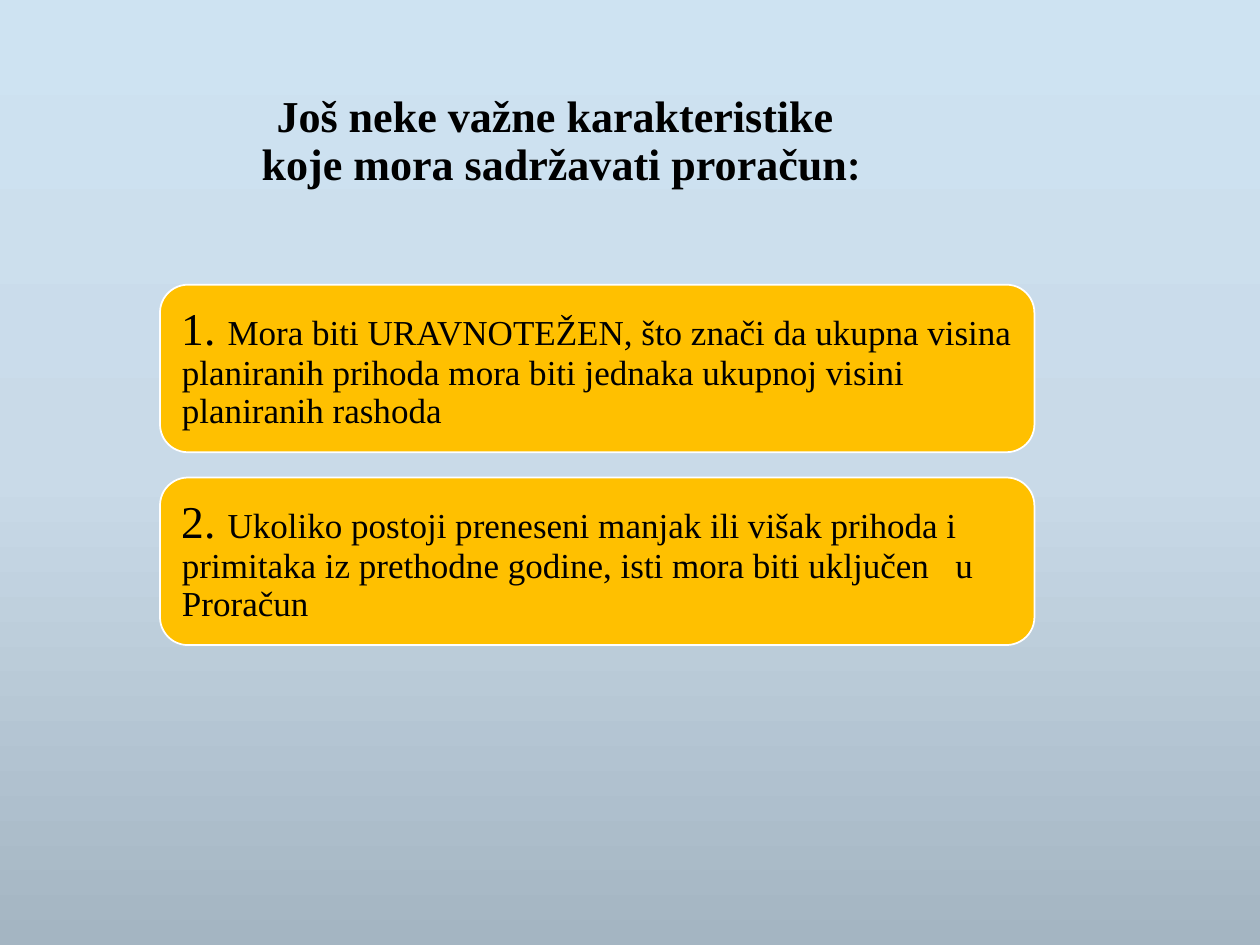
from copy import deepcopy

from pptx import Presentation
from pptx import util as u
from pptx.dml.color import RGBColor
from pptx.enum import shapes, text
from pptx.oxml.ns import qn

W, H = 10, 7.5
LEFT, TOP, BOX_W, BOX_H, PITCH = 1.27, 2.26, 6.94, 1.33, 1.53
FONT = "Times New Roman"
COLORS = {
    "sky": "CEE3F2",
    "mist": "C9DAE8",
    "slate": "A4B5C2",
    "card": "FFC000",
    "edge": "FFFFFF",
    "ink": "000000",
}
RULES = [
    "Mora biti URAVNOTEŽEN, što znači da ukupna visina planiranih prihoda "
    "mora biti jednaka ukupnoj visini planiranih rashoda",
    "Ukoliko postoji preneseni manjak ili višak prihoda i primitaka iz "
    "prethodne godine, isti mora biti uključen   u Proračun",
]


def rgb(name):
    """Return the named palette colour."""
    return RGBColor.from_string(COLORS[name])


def add_run(p, content, size, font=FONT, bold=False):
    """Append a formatted run to a paragraph."""
    r = p.add_run()
    r.text = content
    r.font.size = u.Pt(size)
    r.font.name = font
    r.font.bold = bold
    r.font.color.rgb = rgb("ink")


def set_up_text(sp, align, inset_x, inset_y):
    """Prepare a middle-anchored text frame and return its paragraph."""
    tf = sp.text_frame
    tf.word_wrap = True
    tf.vertical_anchor = text.MSO_ANCHOR.MIDDLE
    tf.margin_left = tf.margin_right = u.Inches(inset_x)
    tf.margin_top = tf.margin_bottom = u.Inches(inset_y)
    p = tf.paragraphs[0]
    p.alignment = align
    p.line_spacing = 0.9
    return p


def paint_background(s):
    """Fill the slide with a three-stop vertical gradient."""
    fill = s.background.fill
    fill.gradient()
    fill.gradient_angle = 270
    stops = next(s.element.iter(qn("a:gsLst")))
    stops.append(deepcopy(stops[-1]))
    for stop, name, pos in zip(fill.gradient_stops, ("sky", "mist", "slate"), (0, 0.5, 1)):
        stop.color.rgb = rgb(name)
        stop.position = pos


def add_title(s):
    """Add the two-line centred heading."""
    sp = s.shapes.add_textbox(*map(u.Inches, (0.98, 0.69, BOX_W, 0.88)))
    p = set_up_text(sp, text.PP_ALIGN.CENTER, 0.1, 0.05)
    add_run(p, "Još neke važne karakteristike ", 25.2, bold=True)
    p.add_line_break()
    add_run(p, "koje mora sadržavati proračun", 25.2, bold=True)
    add_run(p, ":", 25.2, font="Calibri", bold=True)


def add_card(s, row, rule):
    """Add one numbered rule on a rounded card."""
    box = (LEFT, TOP + row * PITCH, BOX_W, BOX_H)
    sp = s.shapes.add_shape(shapes.MSO_SHAPE.ROUNDED_RECTANGLE, *map(u.Inches, box))
    sp.shadow.inherit = False
    sp.fill.solid()
    sp.fill.fore_color.rgb = rgb("card")
    sp.line.color.rgb = rgb("edge")
    sp.line.width = u.Pt(1)
    p = set_up_text(sp, text.PP_ALIGN.LEFT, 0.11, 0.11)
    add_run(p, f"{row + 1}. ", 26)
    add_run(p, rule, 20)


def main():
    """Build and save the slide."""
    prs = Presentation()
    prs.slide_width, prs.slide_height = u.Inches(W), u.Inches(H)
    s = prs.slides.add_slide(prs.slide_layouts[6])
    paint_background(s)
    add_title(s)
    for row, rule in enumerate(RULES):
        add_card(s, row, rule)
    prs.save("out.pptx")


if __name__ == "__main__":
    main()
